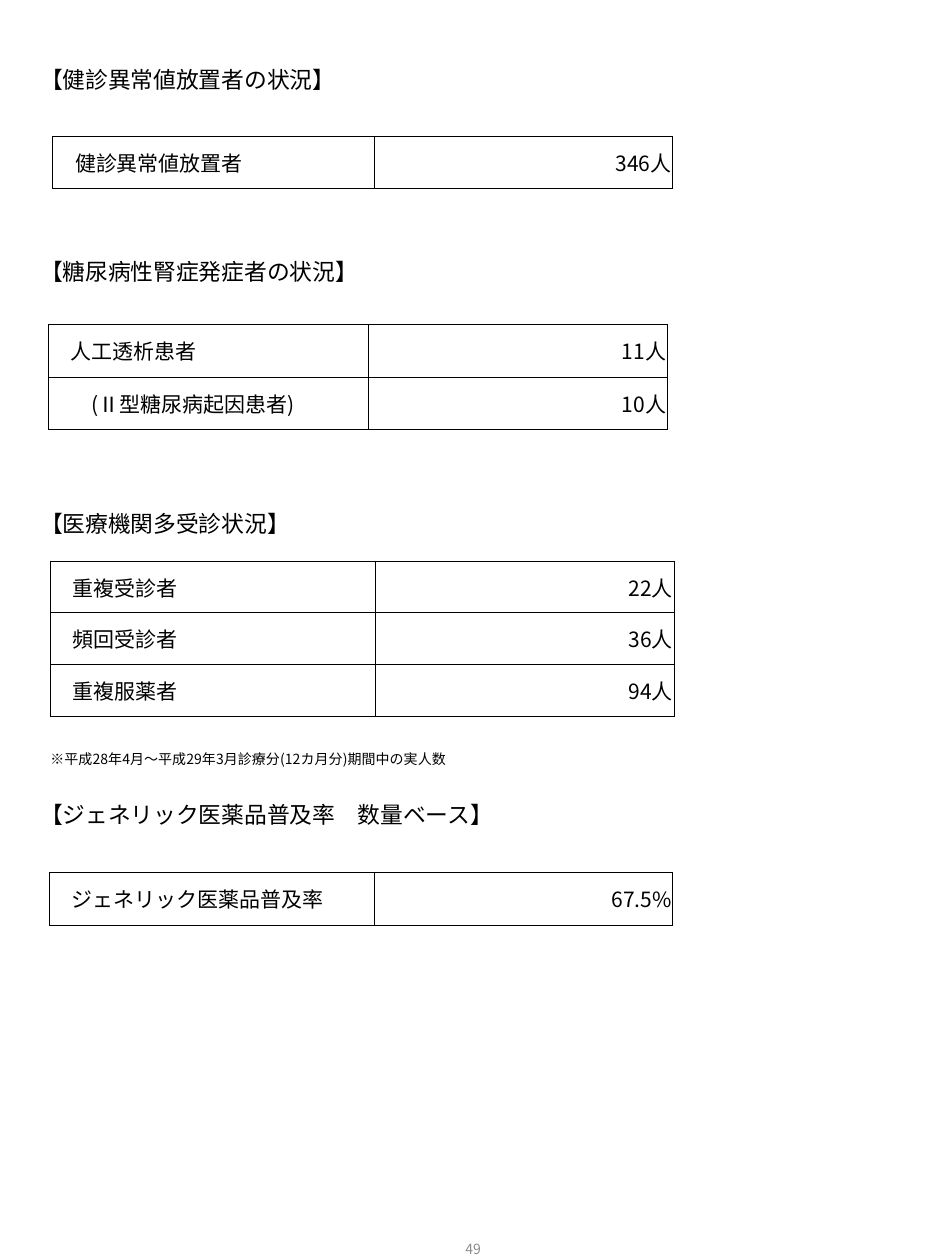
from lxml import etree
from pptx import Presentation
from pptx.dml.color import RGBColor
from pptx.enum import text
from pptx.oxml import ns
from pptx.util import Pt

LEFT, RIGHT = text.PP_ALIGN.LEFT, text.PP_ALIGN.RIGHT
CENTER = text.PP_ALIGN.CENTER
MIDDLE, TOP = text.MSO_ANCHOR.MIDDLE, text.MSO_ANCHOR.TOP


def color(code):
    return RGBColor.from_string(code)


class Page:
    font = "Noto Sans CJK JP"
    ink = "000000"
    gray = "8C8C8C"
    line = 0.5
    body = 12
    indent = 12

    def __init__(self, slide):
        self.slide = slide

    def letter(self, frame, words, size, ink, align=LEFT):
        """Set one styled paragraph in a text frame."""
        frame.text = words
        para = frame.paragraphs[0]
        para.alignment = align
        for run in para.runs:
            run.font.size = Pt(size)
            run.font.name = self.font
            run.font.color.rgb = color(ink)
            east = etree.SubElement(run._r.get_or_add_rPr(), ns.qn("a:ea"))
            east.set("typeface", self.font)
        return para

    def label(self, words, x, y, w, h, size, ink=ink, align=LEFT, anchor=TOP):
        frame = self.slide.shapes.add_textbox(
            Pt(x), Pt(y), Pt(w), Pt(h)).text_frame
        frame.word_wrap = True
        frame.vertical_anchor = anchor
        frame.margin_left = frame.margin_right = 0
        frame.margin_top = frame.margin_bottom = Pt(3.6)
        return self.letter(frame, words, size, ink, align)

    def title(self, words, y):
        self.label(words, 23, y, 482, 22, 13).line_spacing = Pt(16)

    def border(self, cell, sides):
        """Rule the given sides (L, R, T, B) and clear the others."""
        props = cell._tc.get_or_add_tcPr()
        for spot, side in enumerate("LRTB"):
            edge = etree.Element(ns.qn("a:ln" + side), w=str(Pt(self.line)))
            if side in sides:
                fill = etree.SubElement(edge, ns.qn("a:solidFill"))
                etree.SubElement(fill, ns.qn("a:srgbClr"), val=self.ink)
            else:
                etree.SubElement(edge, ns.qn("a:noFill"))
            props.insert(spot, edge)

    def table(self, rows, x, y, cols, high):
        """Draw rows of (label, value, indent level, columns spanned)."""
        last = len(cols) - 1
        grid = self.slide.shapes.add_table(
            len(rows), len(cols), Pt(x), Pt(y),
            Pt(sum(cols)), Pt(high * len(rows))).table
        grid.first_row = grid.horz_banding = False
        for col, wide in zip(grid.columns, cols):
            col.width = Pt(wide)
        for r, (name, value, level, span) in enumerate(rows):
            grid.rows[r].height = Pt(high)
            for c in range(len(cols)):
                cell = grid.cell(r, c)
                cell.fill.background()
                cell.vertical_anchor = MIDDLE
                cell.margin_left = cell.margin_right = Pt(0.7)
                cell.margin_top = cell.margin_bottom = 0
                sides = "TB"
                if c in (0, last):
                    sides += "L"
                if c >= last - 1:
                    sides += "R"
                self.border(cell, sides)
            head, tail = grid.cell(r, 0), grid.cell(r, last)
            head.margin_left = Pt(0.7 + level * self.indent)
            self.letter(head.text_frame, name, self.body, self.ink)
            self.letter(tail.text_frame, value, self.body, self.ink, RIGHT)
            if span > 1:
                head.merge(grid.cell(r, span - 1))


def main():
    deck = Presentation()
    deck.slide_width, deck.slide_height = Pt(540), Pt(720)
    page = Page(deck.slides.add_slide(deck.slide_layouts[6]))

    page.title("【健診異常値放置者の状況】", 33.8)
    page.table([("健診異常値放置者", "346人", 1, 1)],
               30.2, 77.8, [183.6, 170.6], 30)

    page.title("【糖尿病性腎症発症者の状況】", 143.3)
    page.table([("人工透析患者", "11人", 1, 1),
                ("(Ⅱ型糖尿病起因患者)", "10人", 2, 2)],
               27.8, 185.5, [100.1, 50.4, 32.4, 170.6], 30)

    page.title("【医療機関多受診状況】", 287.3)
    page.table([("重複受診者", "22人", 1, 1),
                ("頻回受診者", "36人", 1, 1),
                ("重複服薬者", "94人", 1, 1)],
               28.8, 320.6, [185.8, 170.6], 29.6)
    note = page.label("※平成28年4月～平成29年3月診療分(12カ月分)期間中の実人数",
                      28.8, 419, 482, 24, 8)
    note.line_spacing = Pt(16)

    page.title("【ジェネリック医薬品普及率　数量ベース】", 453.6)
    page.table([("ジェネリック医薬品普及率", "67.5%", 1, 1)],
               28.1, 498.6, [185.8, 170.6], 30)

    page.label("49", 207.4, 694.8, 126, 38, 8, page.gray, CENTER, MIDDLE)
    deck.save("out.pptx")


if __name__ == "__main__":
    main()
